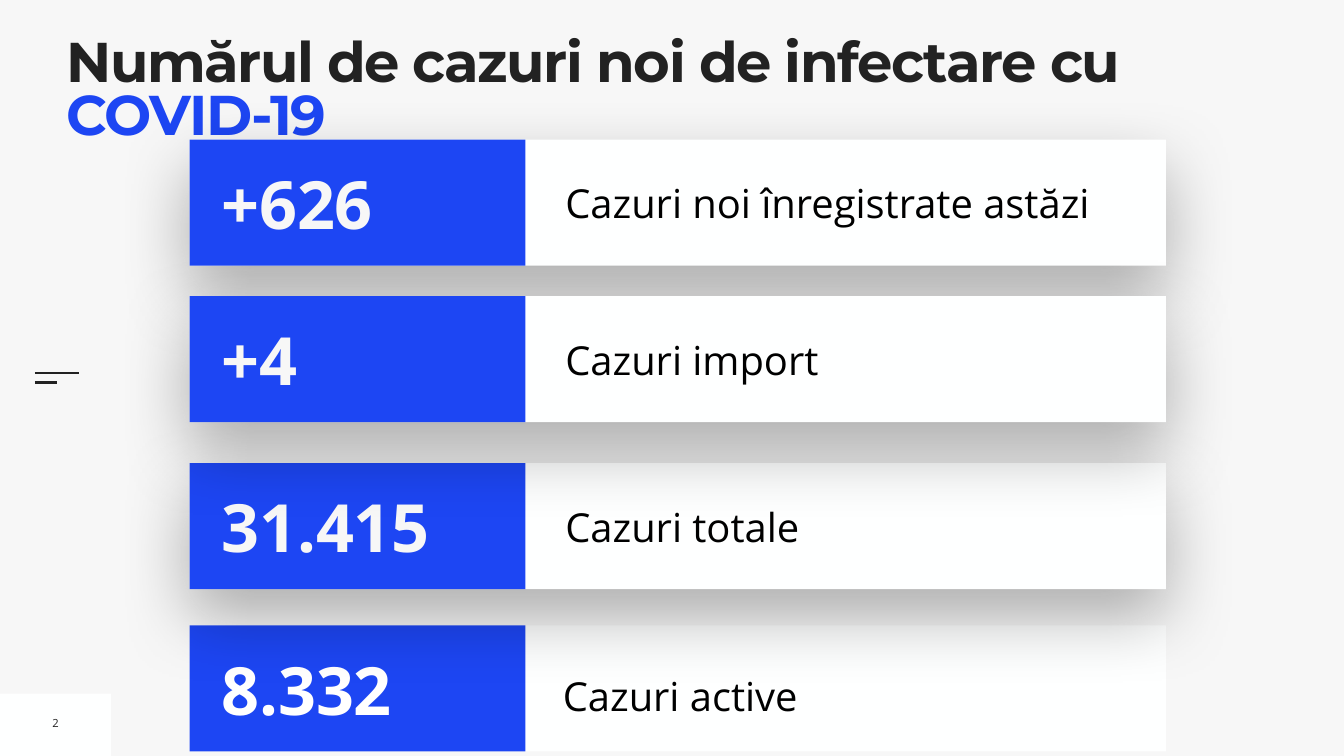
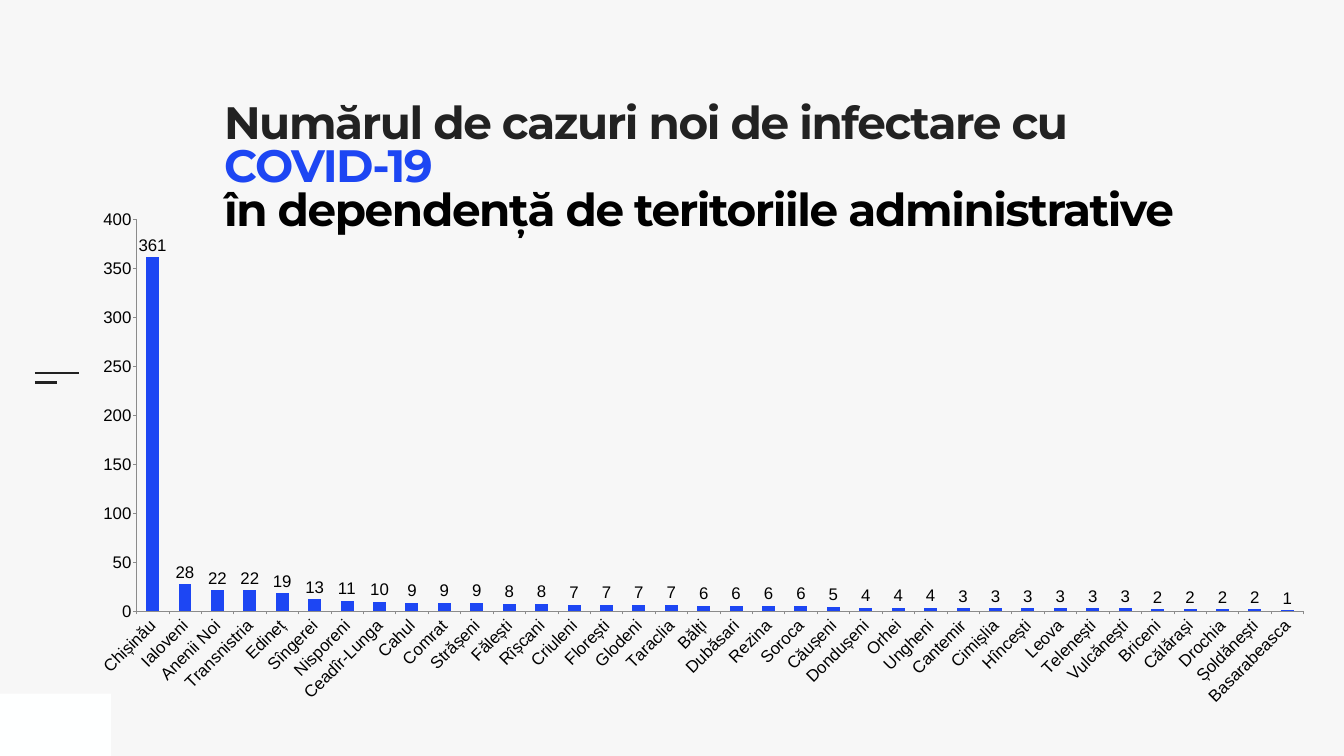
from lxml.etree import SubElement
from pptx import Presentation
from pptx.chart.data import CategoryChartData
from pptx.dml.color import RGBColor
from pptx.enum.chart import XL_CHART_TYPE as ChartType
from pptx.enum.chart import XL_LABEL_POSITION as LabelPosition
from pptx.enum.chart import XL_TICK_MARK as TickMark
from pptx.enum.shapes import MSO_CONNECTOR as Connector
from pptx.enum.shapes import MSO_SHAPE as Shape
from pptx.enum.text import MSO_ANCHOR as Anchor
from pptx.enum.text import PP_ALIGN as Align
from pptx.oxml.ns import qn
from pptx.util import Pt

COLORS = {
    "background": "F7F7F7",
    "panel": "FEFFFF",
    "dark": "222222",
    "blue": "1D46F3",
    "black": "000000",
    "white": "FFFFFF",
    "axis": "8B8B8B",
}
TITLE_FONT = "Montserrat"
BODY_FONT = "Open Sans"
CHART_FONT = "Arial"

ROW_LEFT, ROW_WIDTH, ROW_HEIGHT, NUMBER_WIDTH = 271, 1394.5, 180, 479.5

NEW_CASES = [
    ("Chișinău", 361), ("Ialoveni", 28), ("Anenii Noi", 22),
    ("Transnistria", 22), ("Edineț", 19), ("Sîngerei", 13),
    ("Nisporeni", 11), ("Ceadîr-Lunga", 10), ("Cahul", 9),
    ("Comrat", 9), ("Strășeni", 9), ("Fălești", 8),
    ("Rîșcani", 8), ("Criuleni", 7), ("Florești", 7),
    ("Glodeni", 7), ("Taraclia", 7), ("Bălți", 6),
    ("Dubăsari", 6), ("Rezina", 6), ("Soroca", 6),
    ("Căușeni", 5), ("Dondușeni", 4), ("Orhei", 4),
    ("Ungheni", 4), ("Cantemir", 3), ("Cimișlia", 3),
    ("Hîncești", 3), ("Leova", 3), ("Telenești", 3),
    ("Vulcănești", 3), ("Briceni", 2), ("Călărași", 2),
    ("Drochia", 2), ("Șoldănești", 2), ("Basarabeasca", 1),
]


def color(name):
    return RGBColor.from_string(COLORS[name])


def add_text(slide, box, runs, *, size, font=BODY_FONT, bold=False, inset=7.2,
             anchor=Anchor.MIDDLE, align=Align.LEFT, line_spacing=None,
             tracking=0, wrap=True):
    """Add one paragraph; runs are (text, colour name), "\\v" breaks a line."""
    frame = slide.shapes.add_textbox(*map(Pt, box)).text_frame
    frame.word_wrap = wrap
    frame.vertical_anchor = anchor
    frame.margin_left = frame.margin_right = Pt(inset)
    frame.margin_top = frame.margin_bottom = Pt(inset)
    paragraph = frame.paragraphs[0]
    paragraph.alignment = align
    if line_spacing:
        paragraph.line_spacing = line_spacing
    for text, color_name in runs:
        for index, part in enumerate(text.split("\v")):
            if index:
                paragraph.add_line_break()
            if not part:
                continue
            run = paragraph.add_run()
            run.text = part
            run.font.size = Pt(size)
            run.font.name = font
            run.font.bold = bold
            run.font.color.rgb = color(color_name)
            if tracking:
                run.font._element.set("spc", str(tracking * 100))


def add_title(slide, box, runs, size):
    add_text(slide, box, runs, size=size, font=TITLE_FONT, bold=True, inset=0,
             anchor=Anchor.TOP, line_spacing=0.8, tracking=-2)


def add_soft_shadow(shape):
    effects = shape._element.spPr.find(qn("a:effectLst"))
    shadow = SubElement(effects, qn("a:outerShdw"), blurRad=str(Pt(100)),
                        dist=str(Pt(40)), dir="5400000", rotWithShape="0")
    tint = SubElement(shadow, qn("a:srgbClr"), val=COLORS["black"])
    SubElement(tint, qn("a:alpha"), val="30000")


def add_rectangle(slide, box, fill):
    shape = slide.shapes.add_shape(Shape.RECTANGLE, *map(Pt, box))
    shape.shadow.inherit = False
    shape.fill.solid()
    shape.fill.fore_color.rgb = color(fill)
    shape.line.fill.background()
    return shape


def add_rule(slide, left, top, width):
    rule = slide.shapes.add_connector(
        Connector.STRAIGHT, Pt(left), Pt(top), Pt(left + width), Pt(top))
    rule.line.color.rgb = color("dark")
    rule.line.width = Pt(3)
    SubElement(rule._element.spPr, qn("a:effectLst"))


def add_base_slide(presentation):
    """Add a slide with the background, corner panel and side mark."""
    slide = presentation.slides.add_slide(presentation.slide_layouts[6])
    slide.background.fill.solid()
    slide.background.fill.fore_color.rgb = color("background")
    add_rectangle(slide, (0, 991, 158.5, 89), "panel")
    add_rule(slide, 50, 533.5, 63)
    add_rule(slide, 50, 546.5, 31.5)
    return slide


def add_figure_row(slide, top, number, label, *, number_color="background",
                   label_left=800.5, label_inset=7.2, label_spacing=None,
                   shadow=True):
    middle = top + ROW_HEIGHT / 2
    panel = add_rectangle(slide, (ROW_LEFT, top, ROW_WIDTH, ROW_HEIGHT), "panel")
    if shadow:
        add_soft_shadow(panel)
    add_text(slide, (label_left, middle - 42, 846, 84), [(label, "black")],
             size=57, inset=label_inset, line_spacing=label_spacing)
    add_rectangle(slide, (ROW_LEFT, top, NUMBER_WIDTH, ROW_HEIGHT), "blue")
    add_text(slide, (309, middle - 65, 434, 130), [(number, number_color)],
             size=95, bold=True)


def style_axis(axis):
    axis.has_major_gridlines = False
    axis.major_tick_mark = TickMark.OUTSIDE
    axis.minor_tick_mark = TickMark.NONE
    axis.format.line.color.rgb = color("axis")
    axis.format.line.width = Pt(0.75)


def add_column_chart(slide, box, rows):
    data = CategoryChartData()
    data.categories = [name for name, _ in rows]
    data.add_series("Series 1", [value for _, value in rows])
    chart = slide.shapes.add_chart(
        ChartType.COLUMN_CLUSTERED, *map(Pt, box), data).chart
    chart.has_legend = False
    chart.has_title = False
    chart.font.size = Pt(24)
    chart.font.name = CHART_FONT
    chart.font.color.rgb = color("black")

    style_axis(chart.category_axis)
    style_axis(chart.value_axis)
    chart.value_axis.minimum_scale = 0
    chart.value_axis.maximum_scale = 400
    chart.value_axis.major_unit = 50
    chart.category_axis.tick_labels.font.size = Pt(24)
    label_body = chart.category_axis._element.find(qn("c:txPr")).find(qn("a:bodyPr"))
    label_body.set("rot", "-2700000")

    plot = chart.plots[0]
    plot.gap_width = 150
    plot.vary_by_categories = False
    plot.has_data_labels = True
    plot.data_labels.show_value = True
    plot.data_labels.position = LabelPosition.OUTSIDE_END
    fill = plot.series[0].format.fill
    fill.solid()
    fill.fore_color.rgb = color("blue")


def build_totals_slide(presentation):
    slide = add_base_slide(presentation)
    add_text(slide, (67, 1014.5, 24.5, 36.5), [("2", "dark")], size=16,
             align=Align.CENTER, wrap=False)
    add_title(slide, (94.5, 56, 1723.5, 114),
              [("Numărul de cazuri noi de infectare cu ", "dark"),
               ("COVID-19", "blue")], 80)
    # Back to front: each shadow falls on the rows drawn before it.
    add_figure_row(slide, 893.5, "8.332", "Cazuri active", number_color="white",
                   label_left=804, label_inset=0, label_spacing=1.3, shadow=False)
    add_figure_row(slide, 199.5, "+626", "Cazuri noi înregistrate astăzi")
    add_figure_row(slide, 661.5, "31.415", "Cazuri totale")
    add_figure_row(slide, 423, "+4", "Cazuri import")


def build_territories_slide(presentation):
    slide = add_base_slide(presentation)
    add_title(slide, (320, 149, 1441.5, 196.5),
              [("Numărul de cazuri noi de infectare cu ", "dark"),
               ("COVID-19 \v", "blue"),
               ("în dependență de teritoriile administrative", "black")], 64.8)
    add_column_chart(slide, (106.5, 285, 1791.5, 738), NEW_CASES)


def main():
    presentation = Presentation()
    presentation.slide_width = Pt(1920)
    presentation.slide_height = Pt(1080)
    build_totals_slide(presentation)
    build_territories_slide(presentation)
    presentation.save("out.pptx")


if __name__ == "__main__":
    main()
